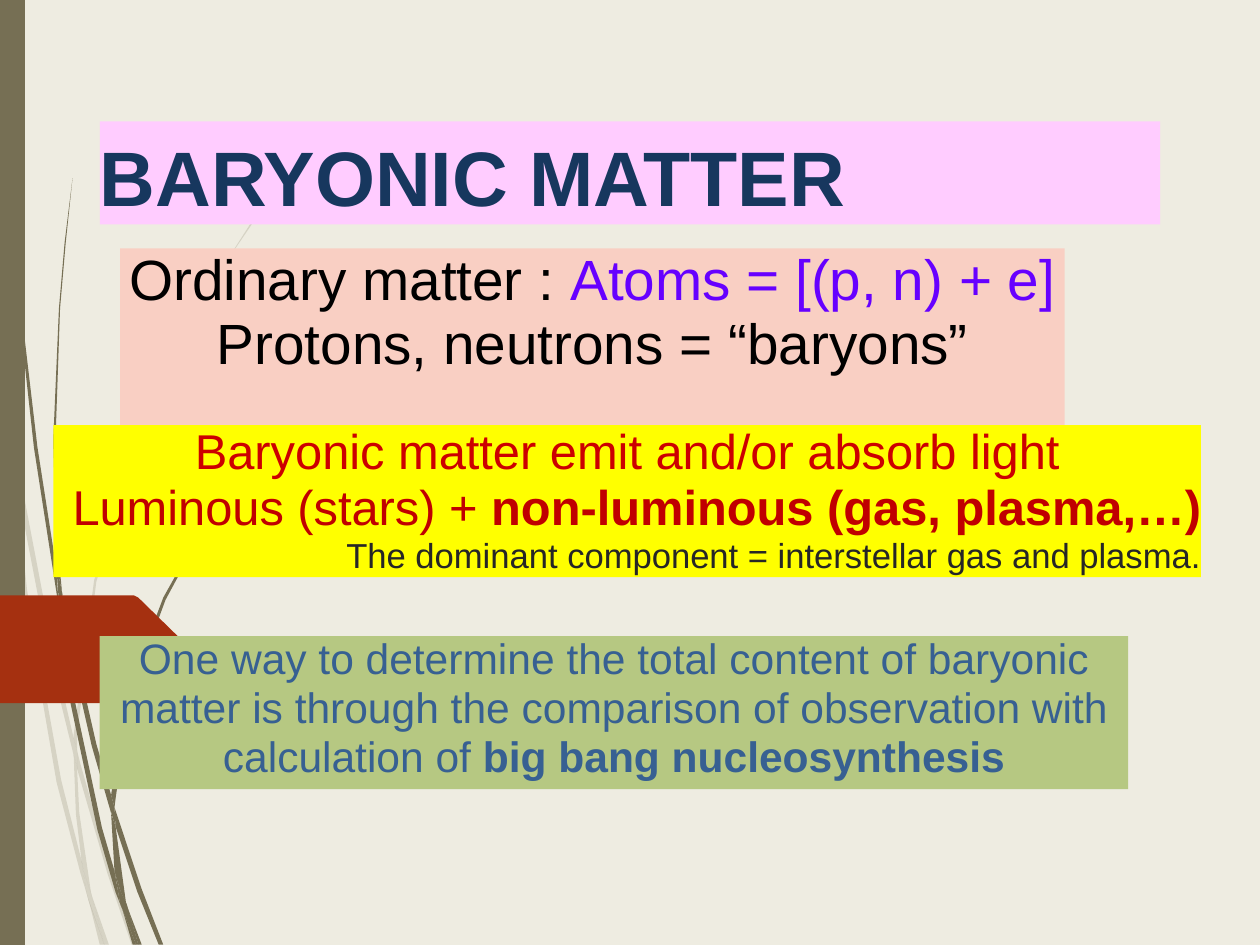
from lxml import etree
from pptx import Presentation
from pptx import util as u
from pptx.dml.color import RGBColor
from pptx.enum import shapes, text
from pptx.oxml.ns import qn

WIDTH, HEIGHT = 800, 600
GRID = 0.72  # points per unit of the outlines below
FONT = "Arial"
PAPER, OLIVE, RUST = "EEECE1", "766F54", "A53010"
LEFT, CENTER, RIGHT = text.PP_ALIGN.LEFT, text.PP_ALIGN.CENTER, text.PP_ALIGN.RIGHT

PALE_BLADES = [
    [(8, 389), (7, 358), (0, 313), (0, 332), (8, 382)],
    [(44, 580), (65, 666), (65, 651), (48, 578), (11, 384), (13, 418)],
    [(71, 674), (68, 662), (68, 678), (95, 771), (116, 833), (120, 833), (98, 768)],
    [(92, 833), (96, 833), (81, 790)],
    [(72, 759), (54, 688), (24, 521), (13, 418), (8, 389), (21, 522), (50, 690),
     (71, 770), (78, 793), (76, 786)],
    [(65, 666), (67, 718), (72, 759), (74, 769), (81, 790), (80, 785), (70, 717),
     (68, 678), (68, 676)],
    [(68, 648), (85, 513), (123, 387), (176, 273), (207, 220), (224, 195), (241, 171),
     (241, 170), (223, 194), (207, 219), (176, 271), (122, 386), (83, 512), (65, 648),
     (65, 651), (68, 662)],
    [(78, 793), (88, 833), (92, 833)],
    [(68, 676), (68, 678), (68, 662), (65, 651), (65, 666)],
    [(74, 769), (72, 759), (76, 786), (78, 794), (92, 833), (81, 790)],
]
DARK_BLADES = [
    [(6, 122), (15, 259), (30, 395), (51, 530), (52, 535), (50, 508), (50, 503),
     (33, 394), (17, 258), (7, 122), (4, 54), (3, 0), (2, 0), (3, 54)],
    [(81, 658), (98, 717), (98, 704), (98, 701), (85, 656), (55, 525), (59, 561)],
    [(104, 721), (101, 712), (102, 729), (121, 786), (140, 833), (144, 833), (125, 784)],
    [(101, 768), (90, 730), (66, 618), (59, 561), (52, 530), (62, 619), (86, 732),
     (102, 787), (108, 802), (106, 797)],
    [(55, 525), (53, 504), (49, 388), (53, 272), (58, 214), (64, 157), (57, 214),
     (52, 272), (47, 388), (50, 499), (55, 524)],
    [(122, 833), (125, 833), (112, 799)],
    [(52, 531), (59, 561), (55, 525), (55, 524), (50, 499), (50, 504)],
    [(102, 704), (115, 613), (146, 529), (188, 451), (213, 416), (226, 399), (240, 382),
     (239, 382), (225, 398), (212, 415), (187, 450), (144, 527), (112, 612), (98, 701),
     (101, 712)],
    [(108, 802), (117, 833), (120, 833)],
    [(98, 717), (101, 768), (106, 785), (112, 799), (111, 795), (102, 729), (100, 723)],
    [(98, 716), (100, 723), (102, 729), (101, 712), (98, 701), (98, 704)],
    [(106, 785), (101, 768), (106, 797), (108, 802), (120, 833), (122, 833), (112, 798)],
]
ARROW_TAB = [(118, 620), (122, 618), (166, 575), (166, 570), (122, 527), (118, 525),
             (0, 525), (0, 620)]

# Paragraphs are (alignment, runs); runs are (text, size, colour, bold)
TITLE = ((63.36, 77.04, 673.2, 65.52), "FFCCFF",
         [(LEFT, [("BARYONIC MATTER", 49, "17375E", True)])])
PANELS = [
    ((76.32, 157.68, 599.76, 112.32), "F9CFC3", [
        (CENTER, [("Ordinary matter : ", 36, "000000", False),
                  ("Atoms = [(p, n) + e]", 36, "6600FF", False)]),
        (CENTER, [("Protons, neutrons = “baryons”", 36, "000000", False)])]),
    ((33.84, 270, 728.64, 96.48), "FFFF00", [
        (CENTER, [("Baryonic matter emit and/or absorb light", 31, "CC0000", False)]),
        (RIGHT, [("Luminous (stars) + ", 31, "C00000", False),
                 ("non-luminous (gas, plasma,…) ", 31, "C00000", True),
                 ("The dominant component = interstellar gas and plasma.",
                  22, "262626", False)])]),
    ((63.36, 403.92, 653.04, 97.2), "B6C882", [
        (CENTER, [("One way to determine the total content of baryonic matter is through "
                   "the comparison of observation with calculation of ",
                   27, "376092", False),
                  ("big bang nucleosynthesis", 27, "376092", True)])]),
]


def paint(fill, color, opacity=None):
    """Fill with a solid hex colour, at a given opacity in percent."""
    fill.solid()
    fill.fore_color.rgb = RGBColor.from_string(color)
    return opacity


def finish(sp, color, opacity=None):
    """Give a shape a plain fill without line or shadow."""
    paint(sp.fill, color)
    sp.line.fill.background()
    sp.shadow.inherit = False
    if opacity:
        clr = sp.element.spPr.find(qn("a:solidFill")).find(qn("a:srgbClr"))
        etree.SubElement(clr, qn("a:alpha")).set("val", str(opacity * 1000))


def add_outline(s, points, color, opacity=None):
    builder = s.shapes.build_freeform(*points[0], scale=u.Pt(GRID))
    builder.add_line_segments(points[1:], close=True)
    finish(builder.convert_to_shape(), color, opacity)


def fill_panel(sp, box, color, paragraphs, anchor):
    """Place a text shape and write its paragraphs run by run."""
    sp.left, sp.top, sp.width, sp.height = map(u.Pt, box)
    paint(sp.fill, color)
    tf = sp.text_frame
    tf.word_wrap = True
    tf.auto_size = text.MSO_AUTO_SIZE.NONE
    tf.vertical_anchor = anchor
    tf.margin_left = tf.margin_top = tf.margin_right = tf.margin_bottom = 0
    for i, (alignment, runs) in enumerate(paragraphs):
        p = tf.add_paragraph() if i else tf.paragraphs[0]
        p.alignment = alignment
        p.line_spacing = 0.95
        for content, size, ink, bold in runs:
            r = p.add_run()
            r.text = content
            r.font.name, r.font.size, r.font.bold = FONT, u.Pt(size), bold
            paint(r.font.fill, ink)


def main():
    prs = Presentation()
    prs.slide_width, prs.slide_height = u.Pt(WIDTH), u.Pt(HEIGHT)
    s = prs.slides.add_slide(prs.slide_layouts.get_by_name("Title Only"))
    paint(s.background.fill, PAPER)

    for blade in PALE_BLADES:
        add_outline(s, blade, OLIVE, 20)
    for blade in DARK_BLADES:
        add_outline(s, blade, OLIVE)
    side_bar = s.shapes.add_shape(shapes.MSO_SHAPE.RECTANGLE, 0, 0, u.Pt(15.84), u.Pt(HEIGHT))
    finish(side_bar, OLIVE)
    add_outline(s, ARROW_TAB, RUST)

    title = s.shapes.title
    title.element.getparent().append(title.element)  # in front of the blades
    fill_panel(title, *TITLE, text.MSO_ANCHOR.BOTTOM)
    for box, color, paragraphs in PANELS:
        sp = s.shapes.add_textbox(*map(u.Pt, box))
        fill_panel(sp, box, color, paragraphs, text.MSO_ANCHOR.TOP)
    prs.save("out.pptx")


if __name__ == "__main__":
    main()
